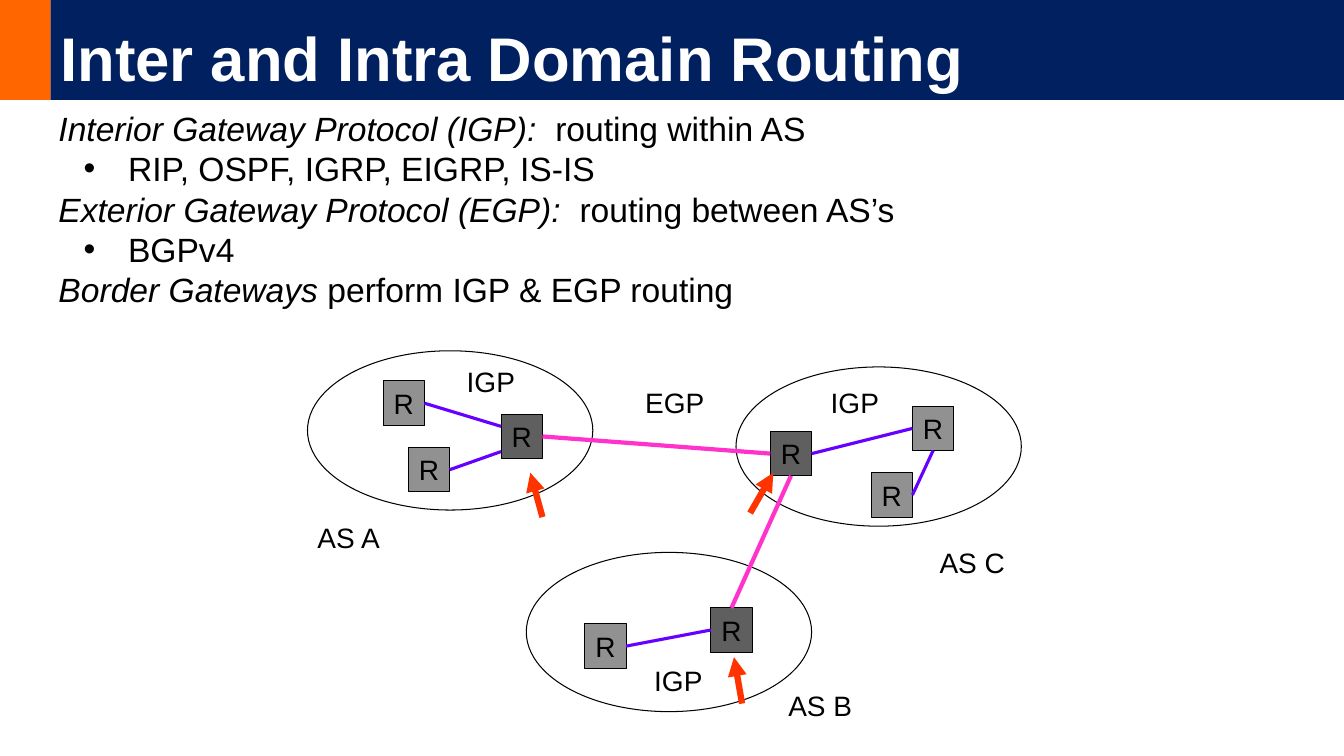
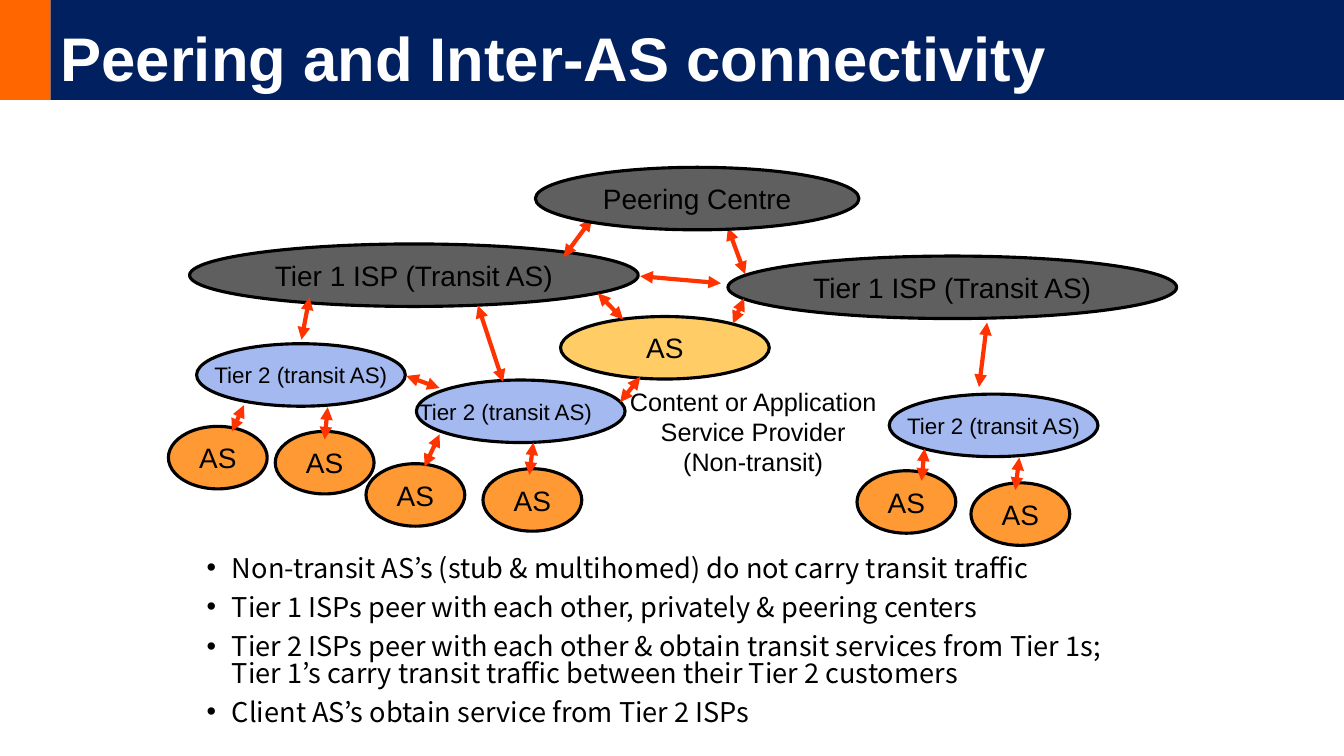
from lxml.etree import SubElement
from pptx import Presentation
from pptx.dml.color import RGBColor
from pptx.enum.shapes import MSO_CONNECTOR, MSO_SHAPE
from pptx.enum.text import MSO_ANCHOR, MSO_AUTO_SIZE, PP_ALIGN
from pptx.oxml.ns import qn
from pptx.util import Inches, Pt

BLACK = RGBColor(0x00, 0x00, 0x00)
WHITE = RGBColor(0xFF, 0xFF, 0xFF)
NAVY = RGBColor(0x00, 0x20, 0x60)
ORANGE = RGBColor(0xFF, 0x66, 0x00)
DARK_GREY = RGBColor(0x5F, 0x5F, 0x5F)
GREY = RGBColor(0x91, 0x91, 0x91)
PINK = RGBColor(0xFF, 0x33, 0xCC)
VIOLET = RGBColor(0x66, 0x00, 0xFF)
RED = RGBColor(0xFF, 0x33, 0x00)
BLUE = RGBColor(0xA3, 0xB9, 0xEF)
YELLOW = RGBColor(0xFF, 0xCC, 0x66)
AMBER = RGBColor(0xFF, 0x99, 0x33)

TOP, LEFT, BOTTOM, RIGHT = range(4)  # connection sites of a rectangle
BAND_WIDTH, BAND_HEIGHT = 0.5, 0.99


class Deck:
    """Shared style and the slide being built."""

    font = "Arial"

    def __init__(self):
        self.deck = Presentation()
        self.deck.slide_width = Inches(13.33)
        self.deck.slide_height = Inches(7.5)
        self.page = None

    def new_page(self, title):
        self.page = self.deck.slides.add_slide(self.deck.slide_layouts[1])
        self.shape(MSO_SHAPE.RECTANGLE, (0, 0, BAND_WIDTH, BAND_HEIGHT), ORANGE)
        box = self.page.shapes.title
        self.place(box, (BAND_WIDTH, 0, 13.33 - BAND_WIDTH, BAND_HEIGHT))
        box.fill.solid()
        box.fill.fore_color.rgb = NAVY
        frame = box.text_frame
        frame.auto_size = MSO_AUTO_SIZE.NONE
        frame.vertical_anchor = MSO_ANCHOR.BOTTOM
        para = frame.paragraphs[0]
        para.alignment = PP_ALIGN.LEFT
        para.line_spacing = 0.9
        self.span(para, title, 44, WHITE, bold=True)

    def place(self, box, area):
        box.left, box.top, box.width, box.height = map(Inches, area)

    def span(self, para, text, size, color=BLACK, font=None, bold=False, italic=False):
        run = para.add_run()
        run.text = text
        run.font.name = font or self.font
        run.font.size = Pt(size)
        run.font.color.rgb = color
        run.font.bold = bold
        run.font.italic = italic

    def shape(self, kind, area, fill=None, line=None, text="", size=20, shift=0):
        """Preset shape with centred text, moved left by shift."""
        box = self.page.shapes.add_shape(kind, *map(Inches, area))
        box.shadow.inherit = False
        if fill is None:
            box.fill.background()
        else:
            box.fill.solid()
            box.fill.fore_color.rgb = fill
        if line is None:
            box.line.fill.background()
        else:
            box.line.color.rgb = BLACK
            box.line.width = Pt(line)
        if text:
            frame = box.text_frame
            frame.word_wrap = False
            frame.vertical_anchor = MSO_ANCHOR.MIDDLE
            frame.margin_left = frame.margin_top = frame.margin_bottom = 0
            frame.margin_right = Inches(2 * shift)
            para = frame.paragraphs[0]
            para.alignment = PP_ALIGN.CENTER
            self.span(para, text, size)
        return box

    def router(self, left, top, fill):
        return self.shape(MSO_SHAPE.RECTANGLE, (left, top, 0.41, 0.44), fill, 0.75, "R")

    def network(self, left, top, width, fill, text, size=20, shift=0):
        self.shape(MSO_SHAPE.OVAL, (left, top, width, 0.62), fill, 2.25, text, size, shift)

    def label(self, area, text, size=20, align=PP_ALIGN.LEFT, wrap=False):
        box = self.page.shapes.add_textbox(*map(Inches, area))
        box.text_frame.word_wrap = wrap
        para = box.text_frame.paragraphs[0]
        para.alignment = align
        self.span(para, text, size)

    def link(self, start, end, color, width, heads=()):
        """Line between two ends, each a point or a (shape, site) pair."""
        points = [(0, 0) if hasattr(first, "shape_id") else (first, second)
                  for first, second in (start, end)]
        line = self.page.shapes.add_connector(
            MSO_CONNECTOR.STRAIGHT, *(Inches(n) for point in points for n in point))
        for target, join in ((start, line.begin_connect), (end, line.end_connect)):
            if hasattr(target[0], "shape_id"):
                join(*target)
        line.line.color.rgb = color
        line.line.width = Pt(width)
        properties = line._element.spPr
        for head in heads:
            SubElement(properties.find(qn("a:ln")), qn(head), type="triangle")
        SubElement(properties, qn("a:effectLst"))

    def body(self, area):
        box = self.page.placeholders[1]
        self.place(box, area)
        box.text_frame.auto_size = MSO_AUTO_SIZE.NONE
        box.text_frame.vertical_anchor = MSO_ANCHOR.TOP
        return box.text_frame

    def body_line(self, frame, spacing, before=0, margin=0, hang=0):
        """Next paragraph of a body; a hanging indent carries a bullet."""
        para = frame.paragraphs[0]
        if para.runs:
            para = frame.add_paragraph()
        para.alignment = PP_ALIGN.LEFT
        para.line_spacing = spacing
        para.space_before = Pt(before)
        properties = para._p.get_or_add_pPr()
        properties.set("marL", str(Inches(margin)))
        properties.set("indent", str(-Inches(hang)))
        if hang:
            SubElement(properties, qn("a:buFont"), typeface="Arial")
            SubElement(properties, qn("a:buChar"), char="•")
        else:
            SubElement(properties, qn("a:buNone"))
        return para


def routing_page(deck):
    deck.new_page("Inter and Intra Domain Routing")

    # Protocols: an italic term with its explanation, or a bullet
    frame = deck.body((0.48, 1.02, 10.59, 2.12))
    for term, rest in (
        ("Interior Gateway Protocol (IGP):  ", "routing within AS"),
        ("", "RIP, OSPF, IGRP, EIGRP, IS-IS"),
        ("Exterior Gateway Protocol (EGP):  ", "routing between AS’s"),
        ("", "BGPv4"),
        ("Border Gateways ", "perform IGP & EGP routing"),
    ):
        indents = {} if term else {"margin": 0.69, "hang": 0.44}
        para = deck.body_line(frame, Pt(28.8), **indents)
        if term:
            deck.span(para, term, 24, italic=True)
        deck.span(para, rest, 24)

    # Autonomous systems
    for left, top in ((3.05, 3.48), (5.22, 5.48), (7.3, 3.64)):
        deck.shape(MSO_SHAPE.OVAL, (left, top, 2.83, 1.58), line=0.75)

    # Routers
    border_a = deck.router(4.97, 4.11, DARK_GREY)
    border_b = deck.router(7.05, 6.03, DARK_GREY)
    border_c = deck.router(7.64, 4.28, DARK_GREY)
    lower_a = deck.router(4.05, 4.44, GREY)
    upper_a = deck.router(3.8, 3.78, GREY)
    inner_b = deck.router(5.8, 6.19, GREY)
    lower_c = deck.router(8.64, 4.69, GREY)
    upper_c = deck.router(9.05, 4.03, GREY)

    # Links between and within the systems
    for start, end in (
        ((border_a, RIGHT), (border_c, LEFT)),
        ((border_b, TOP), (border_c, BOTTOM)),
    ):
        deck.link(start, end, PINK, 3)
    for start, end in (
        ((upper_a, RIGHT), (4.97, 4.23)),
        ((4.97, 4.48), (lower_a, RIGHT)),
        ((inner_b, RIGHT), (border_b, LEFT)),
        ((upper_c, LEFT), (border_c, RIGHT)),
        ((upper_c, BOTTOM), (lower_c, RIGHT)),
    ):
        deck.link(start, end, VIOLET, 2.25)

    # Labels
    for text, left, top in (
        ("AS A", 3.05, 5.11), ("AS B", 7.72, 6.78), ("AS C", 9.22, 5.36),
        ("IGP", 4.53, 3.57), ("EGP", 6.3, 3.78), ("IGP", 8.14, 3.78),
        ("IGP", 6.39, 6.53),
    ):
        deck.label((left, top, 0.95, 0.43), text)

    # Pointers to the border gateways
    for start, end in (
        ((5.38, 5.13), (5.26, 4.69)),
        ((7.36, 6.98), (7.28, 6.52)),
        ((7.44, 5.09), (7.67, 4.69)),
    ):
        deck.link(start, end, RED, 4.5, ["a:tailEnd"])


def peering_page(deck):
    deck.new_page("Peering and Inter-AS connectivity")

    def exchanges(*pairs):
        for start, end in pairs:
            deck.link(start, end, RED, 3, ["a:headEnd", "a:tailEnd"])

    # Notes on peering
    frame = deck.body((1.95, 5.48, 9.3, 1.99))
    for text in (
        "Non-transit AS’s (stub & multihomed) do not carry transit traffic",
        "Tier 1 ISPs peer with each other, privately & peering centers",
        "Tier 2 ISPs peer with each other & obtain transit services from Tier 1s; "
        "Tier 1’s carry transit traffic between their Tier 2 customers",
        "Client AS’s obtain service from Tier 2 ISPs",
    ):
        para = deck.body_line(frame, 0.8, before=9.5, margin=0.25, hang=0.25)
        deck.span(para, text, 19.4, font="Noto Sans CJK KR")

    # Tier 1 and the peering centre, which covers the arrow tips
    deck.network(1.88, 2.42, 4.45, DARK_GREY, "Tier 1 ISP (Transit AS)")
    exchanges(((5.87, 2.17), (5.59, 2.55)), ((7.22, 2.26), (7.39, 2.72)))
    deck.network(7.22, 2.54, 4.45, DARK_GREY, "Tier 1 ISP (Transit AS)")
    deck.network(5.31, 1.66, 3.21, DARK_GREY, "Peering Centre")

    # Tier 2, content provider and client systems
    deck.network(5.56, 3.14, 2.07, YELLOW, "AS")
    for left, top, shift in ((1.95, 3.41, 0), (4.13, 3.77, 0.15), (8.82, 3.91, 0)):
        deck.network(left, top, 2.07, BLUE, "Tier 2 (transit AS)", 16, shift)
    for left, top in ((1.67, 4.23), (2.73, 4.28), (3.63, 4.6),
                      (4.79, 4.65), (8.5, 4.67), (9.63, 4.79)):
        deck.network(left, top, 0.98, AMBER, "AS")
    deck.label((6.11, 3.78, 2.72, 1), "Content or Application Service Provider (Non-transit)",
               18, PP_ALIGN.CENTER, wrap=True)

    # Traffic exchanged between neighbours
    exchanges(
        ((6.35, 2.74), (7.15, 2.81)),
        ((5.93, 2.91), (6.18, 3.17)),
        ((7.38, 2.96), (7.27, 3.21)),
        ((3.07, 2.95), (2.99, 3.37)),
        ((4.74, 3.03), (4.99, 3.79)),
        ((9.79, 3.2), (9.71, 3.84)),
        ((4.36, 3.85), (4.03, 3.73)),
        ((6.35, 3.74), (6.15, 3.99)),
        ((2.42, 4.02), (2.3, 4.28)),
        ((3.25, 4.04), (3.22, 4.36)),
        ((4.36, 4.31), (4.21, 4.63)),
        ((5.29, 4.39), (5.25, 4.71)),
        ((9.17, 4.45), (9.14, 4.77)),
        ((10.11, 4.54), (10.07, 4.86)),
    )


def main():
    deck = Deck()
    routing_page(deck)
    peering_page(deck)
    deck.deck.save("out.pptx")


if __name__ == "__main__":
    main()
